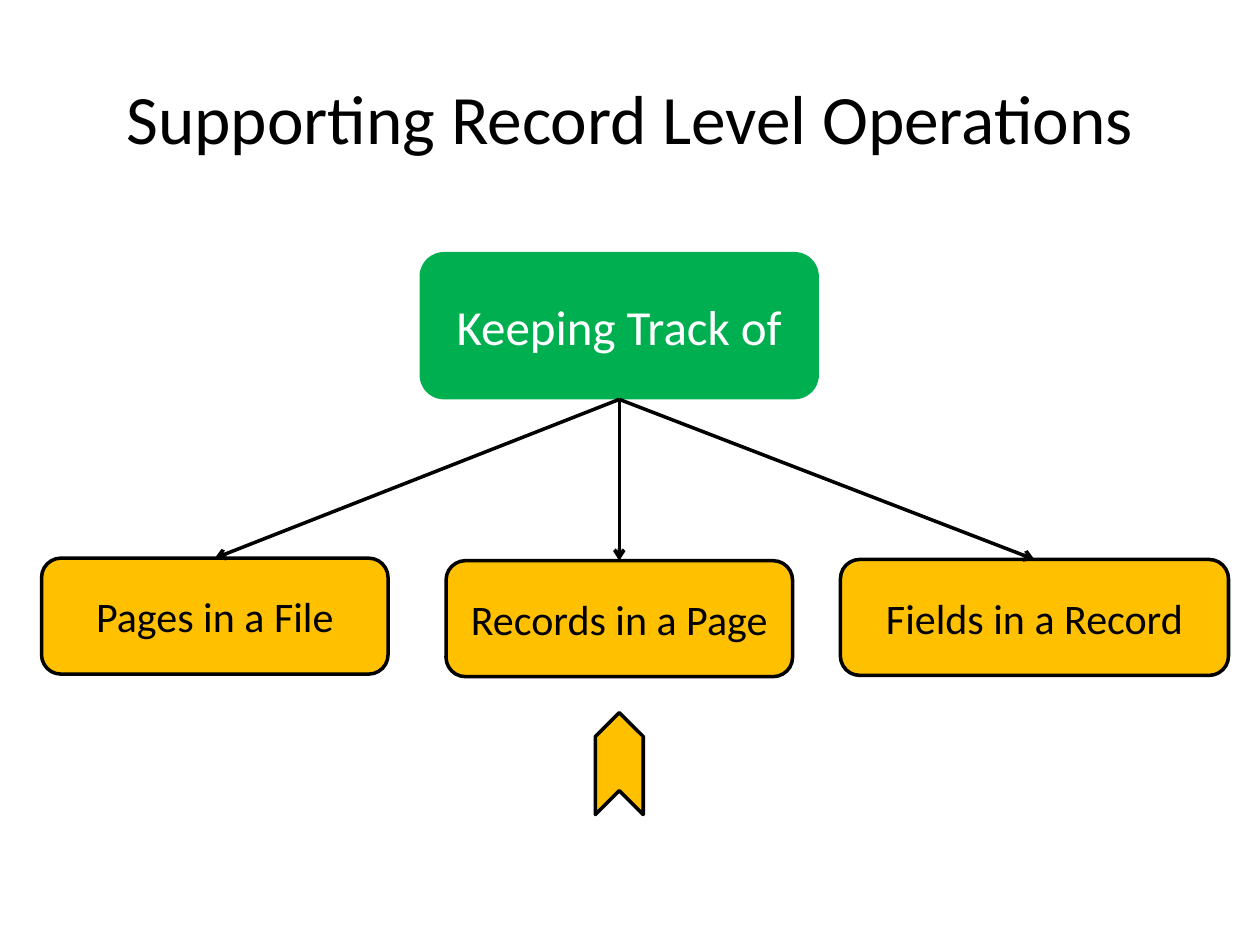
from dataclasses import dataclass
from lxml.etree import SubElement as Sub
from pptx import Presentation
from pptx.dml.color import RGBColor
from pptx.enum.shapes import MSO_CONNECTOR as Link, MSO_SHAPE as Kind
from pptx.enum.text import MSO_ANCHOR as Anchor, PP_ALIGN as Align
from pptx.oxml.ns import qn
from pptx.util import Inches, Pt

BLACK, WHITE, GREEN, GOLD = "000000", "FFFFFF", "00B050", "FFC000"


@dataclass
class Box:
    text: str
    left: float
    top: float
    width: float
    height: float = 0.92
    fill: str = GOLD
    line: str | None = BLACK
    ink: str = BLACK
    size: float = 24
    inset: float = 0
    kind: Kind = Kind.ROUNDED_RECTANGLE
    turn: float = 0

    @property
    def mid(self) -> float:
        return self.left + self.width / 2


def paint(color, tone: str) -> None:
    color.rgb = RGBColor.from_string(tone)


def write(frame, text: str, size: float, ink: str) -> None:
    frame.text = text
    frame.word_wrap = True
    frame.vertical_anchor = Anchor.MIDDLE
    line = frame.paragraphs[0]
    line.alignment = Align.CENTER
    font = line.runs[0].font
    font.name = "Calibri"
    font.size = Pt(size)
    paint(font.color, ink)


def draw(shapes, box: Box) -> None:
    shape = shapes.add_shape(box.kind, Inches(box.left), Inches(box.top),
                             Inches(box.width), Inches(box.height))
    shape.shadow.inherit = False
    shape.rotation = box.turn
    shape.fill.solid()
    paint(shape.fill.fore_color, box.fill)
    if box.line:
        paint(shape.line.color, box.line)
        shape.line.width = Pt(2)
    else:
        shape.line.fill.background()
    if box.text:
        frame = shape.text_frame
        frame.margin_top = frame.margin_bottom = Inches(box.inset)
        write(frame, box.text, box.size, box.ink)


def join(shapes, start: Box, end: Box) -> None:
    arrow = shapes.add_connector(
        Link.STRAIGHT, Inches(start.mid), Inches(start.top + start.height),
        Inches(end.mid), Inches(end.top))
    paint(arrow.line.color, BLACK)
    arrow.line.width = Pt(2)
    props = arrow.element.spPr
    Sub(props.find(qn("a:ln")), qn("a:tailEnd"), type="arrow")
    Sub(props, qn("a:effectLst"))


def main() -> None:
    deck = Presentation()
    deck.slide_width, deck.slide_height = Inches(10), Inches(7.5)
    shapes = deck.slides.add_slide(deck.slide_layouts[5]).shapes
    title = shapes.title
    title.left, title.top = Inches(0.5), Inches(0.3)
    title.width, title.height = Inches(9), Inches(1.25)
    write(title.text_frame, "Supporting Record Level Operations", 39.6, BLACK)

    root = Box("Keeping Track of", 3.33, 2, 3.17, 1.17, GREEN, None, WHITE,
               28, 0.05)
    leaves = [
        Box("Pages in a File", 0.33, 4.43, 2.75),
        Box("Records in a Page", 3.54, 4.45, 2.75),
        Box("Fields in a Record", 6.67, 4.44, 3.08),
    ]
    mark = Box("", 4.51, 5.87, 0.81, 0.38, kind=Kind.CHEVRON, turn=270)
    for box in [root, *leaves, mark]:
        draw(shapes, box)
    for leaf in leaves:
        join(shapes, root, leaf)
    deck.save("out.pptx")


if __name__ == "__main__":
    main()
